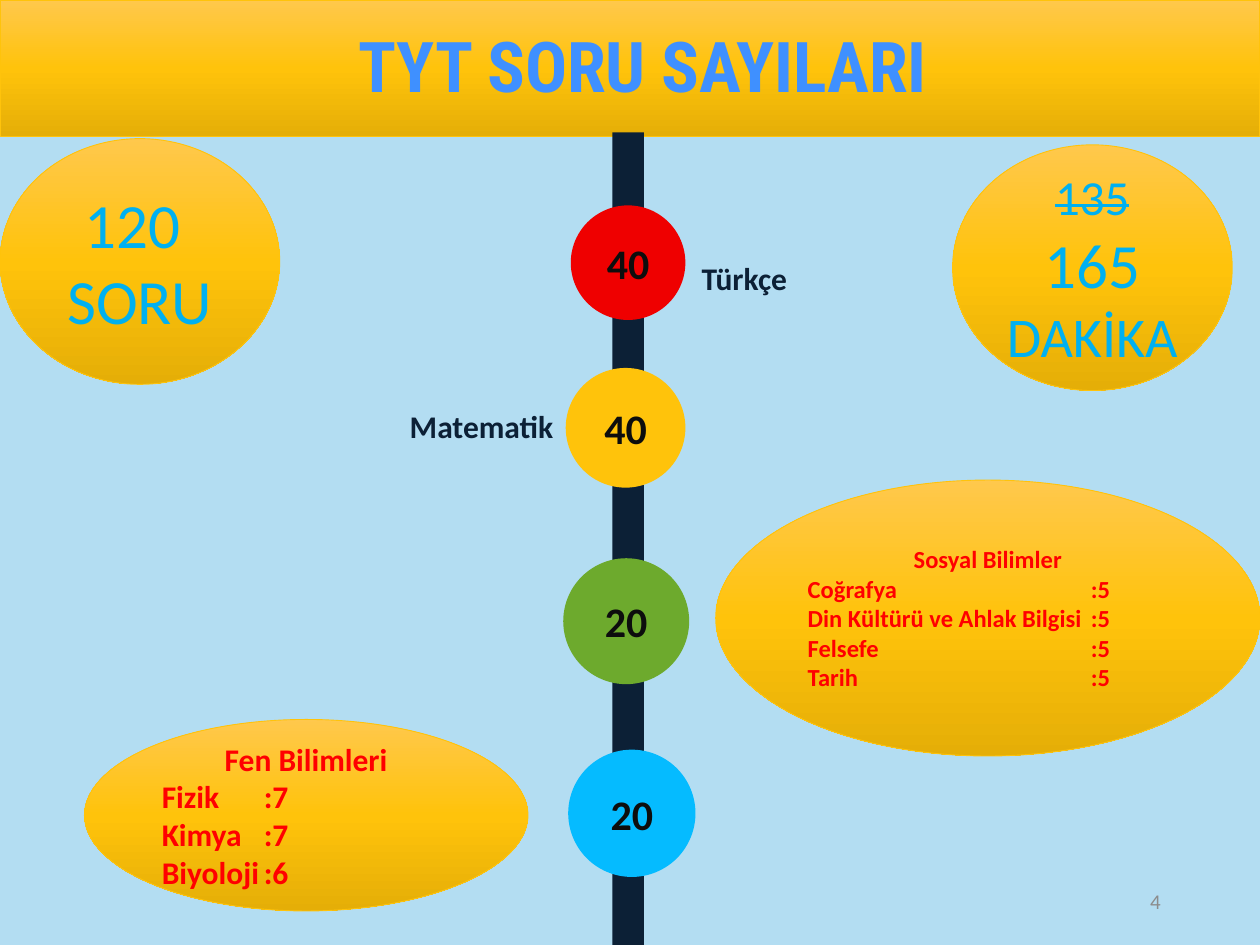
from collections import namedtuple
from copy import deepcopy

from lxml.etree import SubElement
from pptx import Presentation
from pptx.dml.color import RGBColor
from pptx.enum.shapes import MSO_SHAPE as Shape
from pptx.enum.text import MSO_ANCHOR as Anchor, MSO_AUTO_SIZE as AutoSize, PP_ALIGN as Align
from pptx.oxml.ns import qn
from pptx.util import Inches, Pt

WIDTH, HEIGHT = Inches(10), Inches(7.5)
NAVY, SKY, RED, CYAN = "0C2036", "B3DDF2", "FF0000", "00B0F0"
GOLD = "FFC30B"
GOLD_STOPS = [(0, "FFC84C"), (50, GOLD), (100, "E5AE07")]

Box = namedtuple("Box", "left top width height")


def area(left, top, width, height):
    """Box from percentages of the slide's width and height."""
    return Box(int(WIDTH * left / 100), int(HEIGHT * top / 100),
               int(WIDTH * width / 100), int(HEIGHT * height / 100))


def color(value):
    return RGBColor.from_string(value)


def add_run(paragraph, text, size, tint, bold=False, font="Calibri", strike=False):
    run = paragraph.add_run()
    run.text = text
    run.font.name, run.font.size, run.font.bold = font, Pt(size), bold
    run.font.color.rgb = color(tint)
    if strike:
        run.font._element.set("strike", "sngStrike")


def add_paragraph(frame, index, align):
    paragraph = frame.add_paragraph() if index else frame.paragraphs[0]
    paragraph.alignment = align
    return paragraph


def add_plain(slide, kind, box, fill):
    shape = slide.shapes.add_shape(kind, *box)
    shape.shadow.inherit = False
    shape.fill.solid()
    shape.fill.fore_color.rgb = color(fill)
    shape.line.fill.background()
    shape.text_frame.word_wrap = True
    shape.text_frame.vertical_anchor = Anchor.MIDDLE
    return shape


def add_gold(slide, kind, box):
    """Shape with the vertical three-stop gold gradient."""
    shape = add_plain(slide, kind, box, GOLD)
    shape.fill.gradient()
    shape.fill.gradient_angle = 270
    stop_list = shape.element.find(".//" + qn("a:gsLst"))
    stop_list.append(deepcopy(stop_list[-1]))
    for stop, (position, tint) in zip(shape.fill.gradient_stops, GOLD_STOPS):
        stop.position = position / 100
        stop.color.rgb = color(tint)
    shape.line.color.rgb = color(GOLD)
    shape.line.width = Pt(0.5)
    return shape


def add_label(slide, box, text, size, tint, align, bold=False):
    frame = slide.shapes.add_textbox(*box).text_frame
    frame.word_wrap = True
    frame.vertical_anchor = Anchor.MIDDLE
    add_run(add_paragraph(frame, 0, align), text, size, tint, bold)


def header(slide, box, text):
    band = add_gold(slide, Shape.RECTANGLE, box)
    title = slide.shapes.title
    title.element.addprevious(band.element)
    title.left, title.top = box.left + int(box.width * 0.01), int(box.height * 0.12)
    title.width, title.height = box.width, int(box.height * 1.09)
    frame = title.text_frame
    frame.word_wrap = True
    frame.auto_size = AutoSize.NONE
    frame.vertical_anchor = Anchor.TOP
    add_run(add_paragraph(frame, 0, Align.CENTER), text, 40, "3F90FF", True,
            "Roboto Condensed")


def timeline(slide, box, badges):
    """Spine with round badges, placed in percentages of the spine's box."""
    add_plain(slide, Shape.RECTANGLE, box, NAVY)
    for count, fill, across, down, diameter in badges:
        side = int(box.height * diameter / 100)
        left = box.left + int(box.width * across / 100) - side // 2
        top = box.top + int(box.height * down / 100) - side // 2
        badge = add_plain(slide, Shape.OVAL, Box(left, top, side, side), fill)
        paragraph = add_paragraph(badge.text_frame, 0, Align.CENTER)
        add_run(paragraph, count, 24, "0D0D0D", True)


def summary_oval(slide, box, lines):
    frame = add_gold(slide, Shape.OVAL, box).text_frame
    for index, (text, size, strike) in enumerate(lines):
        paragraph = add_paragraph(frame, index, Align.CENTER)
        add_run(paragraph, text, size, CYAN, strike=strike)


def subject_oval(slide, box, heading, rows, size, tab):
    """Heading above subjects, whose counts line up at a tab stop."""
    frame = add_gold(slide, Shape.OVAL, box).text_frame
    add_run(add_paragraph(frame, 0, Align.CENTER), heading, size, RED, True)
    for index, (subject, count) in enumerate(rows, 1):
        paragraph = add_paragraph(frame, index, Align.LEFT)
        properties = paragraph._p.get_or_add_pPr()
        tabs = SubElement(properties, qn("a:tabLst"))
        SubElement(tabs, qn("a:tab"), pos=str(int(box.width * tab)), algn="l")
        add_run(paragraph, f"{subject}\t:{count}", size, RED, True)


def main():
    presentation = Presentation()
    presentation.slide_width, presentation.slide_height = WIDTH, HEIGHT
    slide = presentation.slides.add_slide(presentation.slide_layouts[5])
    slide.background.fill.solid()
    slide.background.fill.fore_color.rgb = color(SKY)

    header(slide, area(0, 0, 100, 14.4), "TYT SORU SAYILARI")

    # Question counts along the spine
    timeline(slide, area(48.6, 14, 2.5, 86), [
        ("40", "EF0000", 50, 16.05, 14.1),
        ("40", GOLD, 42, 36.36, 14.73),
        ("20", "6DAA2D", 44, 60.16, 15.5),
        ("20", "05BBFF", 62, 83.8, 15.66),
    ])
    add_label(slide, area(54.7, 26.7, 11.8, 5.4), "Türkçe", 18, NAVY, Align.LEFT, True)
    add_label(slide, area(4.5, 42.4, 40.4, 5.4), "Matematik", 18, NAVY, Align.RIGHT, True)

    # Totals
    summary_oval(slide, area(0, 14.67, 22.2, 26),
                 [("120 ", 36, False), ("SORU", 36, False)])
    summary_oval(slide, area(75.6, 15.33, 22.2, 26),
                 [("135", 28, True), ("165", 36, False), ("DAKİKA", 32, False)])

    # Subject breakdowns
    subject_oval(slide, area(6.7, 76.13, 35.2, 20.27), "Fen Bilimleri",
                 [("Fizik", 7), ("Kimya", 7), ("Biyoloji", 6)], 18, 0.23)
    subject_oval(slide, area(56.8, 50.8, 43.2, 29.2), "Sosyal Bilimler",
                 [("Coğrafya", 5), ("Din Kültürü ve Ahlak Bilgisi", 5),
                  ("Felsefe", 5), ("Tarih", 5)], 14, 0.52)

    # Page number
    add_label(slide, area(70.6, 92.67, 22.5, 5.33), "4", 12, "8C8C8C", Align.RIGHT)

    presentation.save("out.pptx")


if __name__ == "__main__":
    main()
